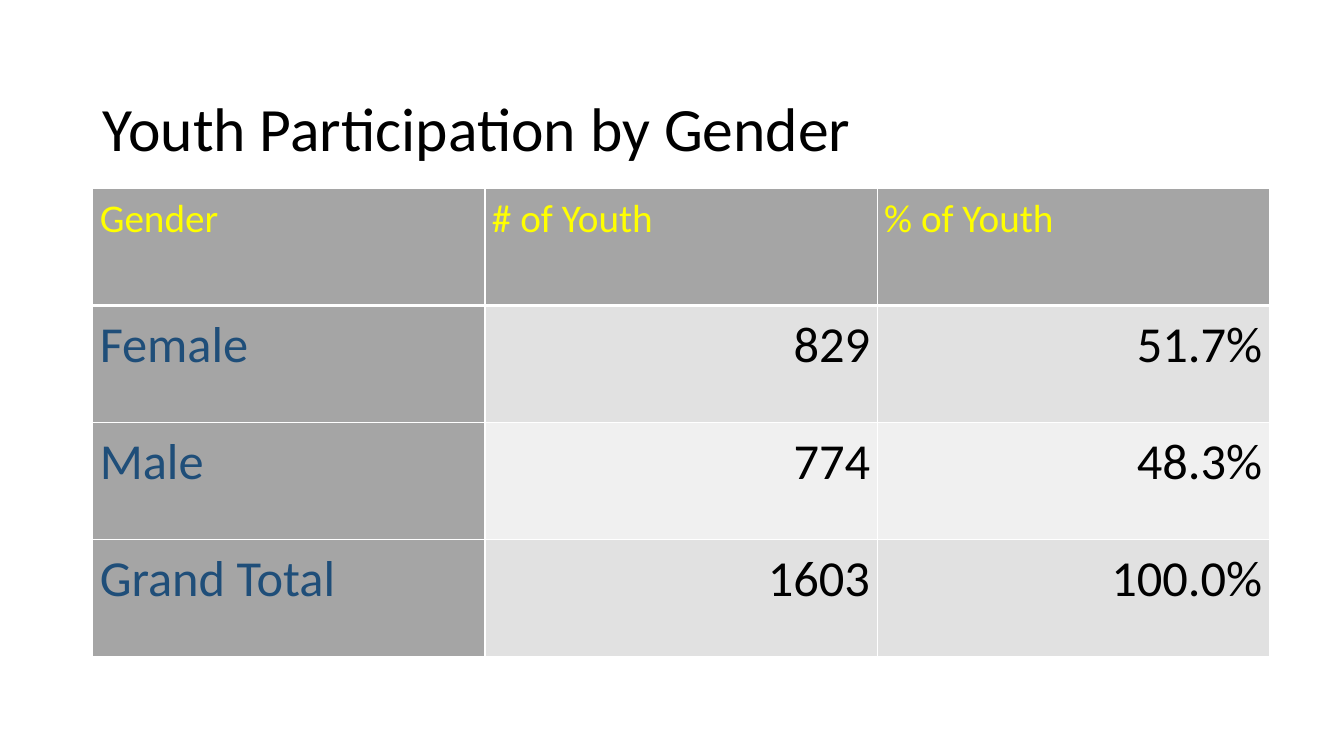
from dataclasses import dataclass

from lxml import etree
from pptx import Presentation, util as u
from pptx.dml.color import RGBColor
from pptx.enum import text
from pptx.oxml import ns

TITLE = "Youth Participation by Gender"
HEADER = ("Gender", "# of Youth", "% of Youth")
ROWS = [
    ("Female", "829", "51.7%"),
    ("Male", "774", "48.3%"),
    ("Grand Total", "1603", "100.0%"),
]


@dataclass(frozen=True)
class Theme:
    font: str = "Calibri"
    title_size: int = 44
    header_size: int = 28
    body_size: int = 36
    title_color: str = "000000"
    header_color: str = "FFFF00"
    label_color: str = "1F4E79"
    value_color: str = "000000"
    label_fill: str = "A5A5A5"
    band_fills: tuple = ("E1E1E1", "F0F0F0")
    border: str = "FFFFFF"
    thin: int = 1
    thick: int = 3


THEME = Theme()
SLIDE_W, SLIDE_H = u.Inches(13.33), u.Inches(7.5)
LEFT = u.Inches(0.92)
TITLE_BOX = (LEFT, u.Inches(0.58), u.Inches(11.5), u.Inches(1.45))
TABLE_TOP = u.Inches(1.87)
COL_W, ROW_H = u.Inches(3.89), u.Inches(1.16)
CELL_INSET = u.Inches(0.07)


def write(tf, words, size, color, spacing, align):
    p = tf.paragraphs[0]
    p.alignment = align
    p.line_spacing = spacing
    r = p.add_run()
    r.text = words
    r.font.name = THEME.font
    r.font.size = u.Pt(size)
    r.font.bold = False
    r.font.color.rgb = RGBColor.from_string(color)


def add_borders(cell, bottom):
    props = cell._tc.get_or_add_tcPr()
    widths = {"L": THEME.thin, "R": THEME.thin, "T": THEME.thin, "B": bottom}
    for side, width in widths.items():
        line = etree.SubElement(props, ns.qn(f"a:ln{side}"), w=str(u.Pt(width)))
        fill = etree.SubElement(line, ns.qn("a:solidFill"))
        etree.SubElement(fill, ns.qn("a:srgbClr"), val=THEME.border)


def cell_style(row, col):
    if row == 0:
        return THEME.header_size, THEME.header_color, THEME.label_fill
    if col == 0:
        return THEME.body_size, THEME.label_color, THEME.label_fill
    return THEME.body_size, THEME.value_color, THEME.band_fills[(row - 1) % 2]


def add_title(s):
    sp = s.shapes.title
    sp.left, sp.top, sp.width, sp.height = TITLE_BOX
    tf = sp.text_frame
    tf.word_wrap = True
    tf.vertical_anchor = text.MSO_ANCHOR.MIDDLE
    write(tf, TITLE, THEME.title_size, THEME.title_color, 0.9, text.PP_ALIGN.LEFT)


def add_gender_table(s):
    data = [HEADER, *ROWS]
    n_rows, n_cols = len(data), len(HEADER)
    table = s.shapes.add_table(
        n_rows, n_cols, LEFT, TABLE_TOP, COL_W * n_cols, ROW_H * n_rows
    ).table
    for row, values in enumerate(data):
        for col, words in enumerate(values):
            cell = table.cell(row, col)
            size, color, fill = cell_style(row, col)
            cell.margin_left = cell.margin_right = CELL_INSET
            cell.margin_top = cell.margin_bottom = 0
            cell.vertical_anchor = text.MSO_ANCHOR.TOP
            add_borders(cell, THEME.thin if row else THEME.thick)
            cell.fill.solid()
            cell.fill.fore_color.rgb = RGBColor.from_string(fill)
            align = text.PP_ALIGN.RIGHT if row and col else text.PP_ALIGN.LEFT
            write(cell.text_frame, words, size, color, 1.15, align)


def main():
    prs = Presentation()
    prs.slide_width, prs.slide_height = SLIDE_W, SLIDE_H
    s = prs.slides.add_slide(prs.slide_layouts.get_by_name("Title Only"))
    add_title(s)
    add_gender_table(s)
    prs.save("out.pptx")


if __name__ == "__main__":
    main()
